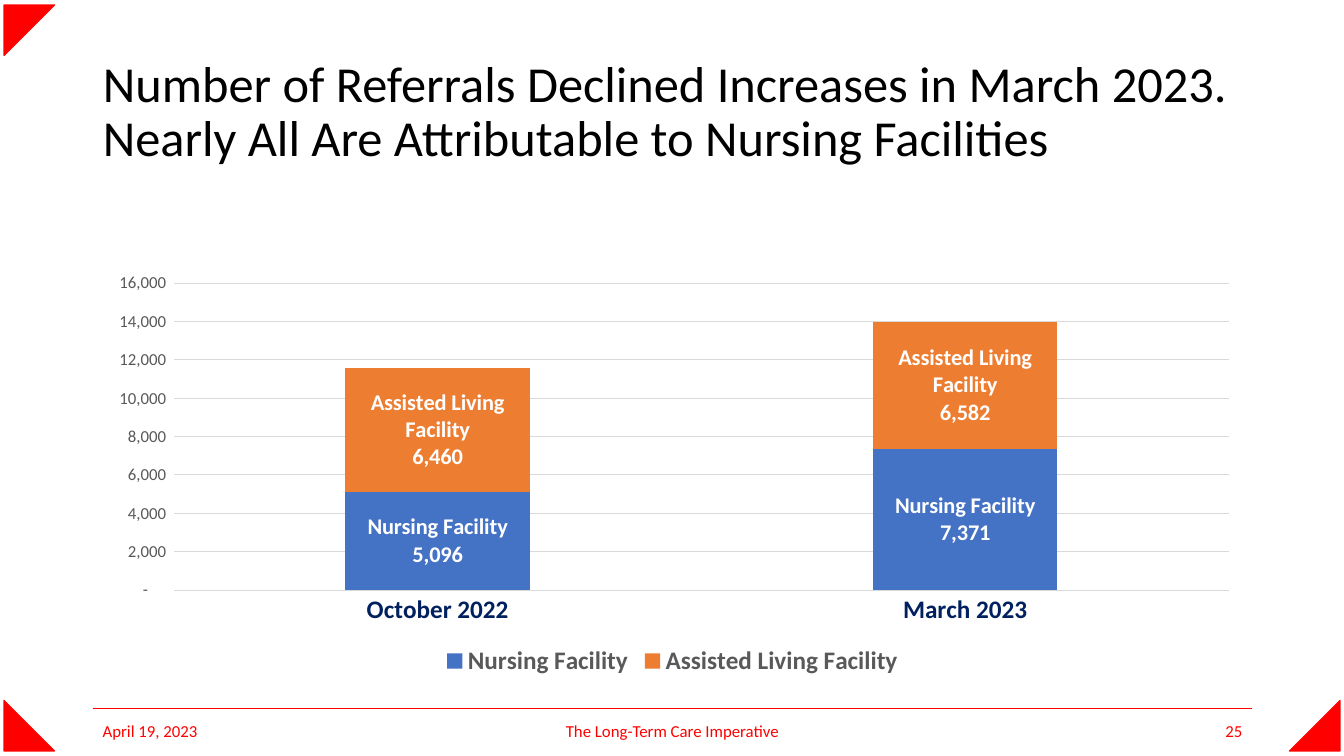
from lxml import etree
from pptx import Presentation
from pptx.chart.data import CategoryChartData
from pptx.dml.color import RGBColor
from pptx.enum.chart import XL_CHART_TYPE as ChartType, XL_LEGEND_POSITION as LegendPos
from pptx.enum.chart import XL_TICK_MARK as TickMark
from pptx.enum.shapes import MSO_CONNECTOR as Connector, MSO_SHAPE as Shape
from pptx.enum.text import MSO_ANCHOR as Anchor, PP_ALIGN as Align
from pptx.oxml import parse_xml
from pptx.oxml.ns import nsdecls, qn
from pptx.util import Inches, Pt

COLORS = {"red": "FF0000", "black": "000000", "white": "FFFFFF", "navy": "002060",
          "gray": "595959", "grid": "D9D9D9", "blue": "4472C4", "orange": "ED7D31"}
FONT = "Calibri"
LEFT, WIDTH = 0.92, 11.5
HEADLINE = ("Number of Referrals Declined Increases in March 2023. "
            "Nearly All Are Attributable to Nursing Facilities")
MONTHS = ["October 2022", "March 2023"]
REFERRALS = [("Nursing Facility", (5096, 7371), "blue"),
             ("Assisted Living Facility", (6460, 6582), "orange")]
FOOTERS = [("April 19, 2023", LEFT, 3, Align.LEFT),
           ("The Long-Term Care Imperative", 4.42, 4.5, Align.CENTER),
           ("25", 9.42, 3, Align.RIGHT)]
CORNERS = [(0.04, 0.05, 90), (12.79, 6.95, 270), (0.04, 6.95, 0)]
PLOT_AREA = {"x": 0.07, "y": 0.17, "w": 0.91, "h": 0.64}
AXIS_FORMAT = '_(* #,##0_);_(* \\(#,##0\\);_(* "-"??_);_(@_)'


def rgb(name):
    return RGBColor.from_string(COLORS[name])


def style(font, size, color, bold=False):
    for field, value in {"name": FONT, "size": Pt(size), "bold": bold}.items():
        setattr(font, field, value)
    font.color.rgb = rgb(color)


def draw_line(line, color, width):
    line.color.rgb = rgb(color)
    line.width = Pt(width)


def add_frame(slide):
    for x, y, rotation in CORNERS:
        corner = slide.shapes.add_shape(Shape.RIGHT_TRIANGLE, Inches(x), Inches(y),
                                        Inches(0.5), Inches(0.5))
        corner.rotation = rotation
        corner.shadow.inherit = False
        corner.fill.solid()
        corner.fill.fore_color.rgb = rgb("red")
        draw_line(corner.line, "red", 1)
    rule = slide.shapes.add_connector(Connector.STRAIGHT, Inches(LEFT), Inches(7.03),
                                      Inches(LEFT + WIDTH), Inches(7.03))
    draw_line(rule.line, "red", 0.5)
    etree.SubElement(rule._element.spPr, qn("a:effectLst"))
    for wording, x, width, align in FOOTERS:
        footer = slide.shapes.add_textbox(Inches(x), Inches(7.05), Inches(width), Inches(0.4))
        footer.text_frame.word_wrap = True
        footer.text_frame.vertical_anchor = Anchor.MIDDLE
        paragraph = footer.text_frame.paragraphs[0]
        paragraph.text = wording
        paragraph.alignment = align
        style(paragraph.runs[0].font, 12, "red")


def add_headline(slide):
    title = slide.shapes.title
    title.left, title.top = Inches(LEFT), Inches(0.4)
    title.width, title.height = Inches(WIDTH), Inches(1.45)
    title.text_frame.word_wrap = True
    title.text_frame.vertical_anchor = Anchor.MIDDLE
    paragraph = title.text_frame.paragraphs[0]
    paragraph.text = HEADLINE
    paragraph.alignment = Align.LEFT
    paragraph.line_spacing = 0.9
    style(paragraph.runs[0].font, 36, "black")


def format_axes(chart):
    months, counts = chart.category_axis, chart.value_axis
    for axis in (months, counts):
        axis.major_tick_mark = axis.minor_tick_mark = TickMark.NONE
    style(months.tick_labels.font, 18, "navy", True)
    draw_line(months.format.line, "grid", 0.75)
    style(counts.tick_labels.font, 12, "gray")
    counts.tick_labels.number_format = AXIS_FORMAT
    counts.tick_labels.number_format_is_linked = False
    counts.minimum_scale, counts.maximum_scale, counts.major_unit = 0, 16000, 2000
    counts.format.line.fill.background()
    draw_line(counts.major_gridlines.format.line, "grid", 0.75)


def place_plot(chart):
    sizes = "".join(f'<c:{side} val="{share}"/>' for side, share in PLOT_AREA.items())
    layout = parse_xml(f'<c:layout {nsdecls("c")}><c:manualLayout>'
                       '<c:layoutTarget val="inner"/><c:xMode val="edge"/>'
                       f'<c:yMode val="edge"/>{sizes}</c:manualLayout></c:layout>')
    area = chart._chartSpace.chart.plotArea
    for old in area.findall(qn("c:layout")):
        area.remove(old)
    area.insert(0, layout)


def label_bars(series):
    labels = series.data_labels
    formats = {"show_value": True, "show_series_name": True,
               "number_format": "#,##0", "number_format_is_linked": False}
    for field, value in formats.items():
        setattr(labels, field, value)
    style(labels.font, 16, "white", True)
    labels._element.find(f".//{qn('a:bodyPr')}").set("wrap", "square")
    separator = parse_xml(f'<c:separator {nsdecls("c")}>\n</c:separator>')
    labels._element.find(qn("c:showBubbleSize")).addnext(separator)


def add_referral_chart(slide):
    data = CategoryChartData(number_format="#,##0")
    data.categories = MONTHS
    for facility, counts, _ in REFERRALS:
        data.add_series(facility, counts)
    chart = slide.shapes.add_chart(ChartType.COLUMN_STACKED, Inches(LEFT), Inches(2),
                                   Inches(WIDTH), Inches(4.76), data).chart
    style(chart.font, 10, "black")
    chart.has_title = False
    chart.has_legend = True
    chart.legend.position = LegendPos.BOTTOM
    chart.legend.include_in_layout = False
    style(chart.legend.font, 18, "gray", True)
    plot = chart.plots[0]
    plot.gap_width, plot.overlap, plot.vary_by_categories = 186, 100, False
    for series, (_, _, color) in zip(plot.series, REFERRALS):
        series.format.fill.solid()
        series.format.fill.fore_color.rgb = rgb(color)
        label_bars(series)
    format_axes(chart)
    place_plot(chart)


def main():
    deck = Presentation()
    deck.slide_width, deck.slide_height = Inches(13.33), Inches(7.5)
    slide = deck.slides.add_slide(deck.slide_layouts[5])
    add_frame(slide)
    add_headline(slide)
    add_referral_chart(slide)
    deck.save("out.pptx")


if __name__ == "__main__":
    main()
